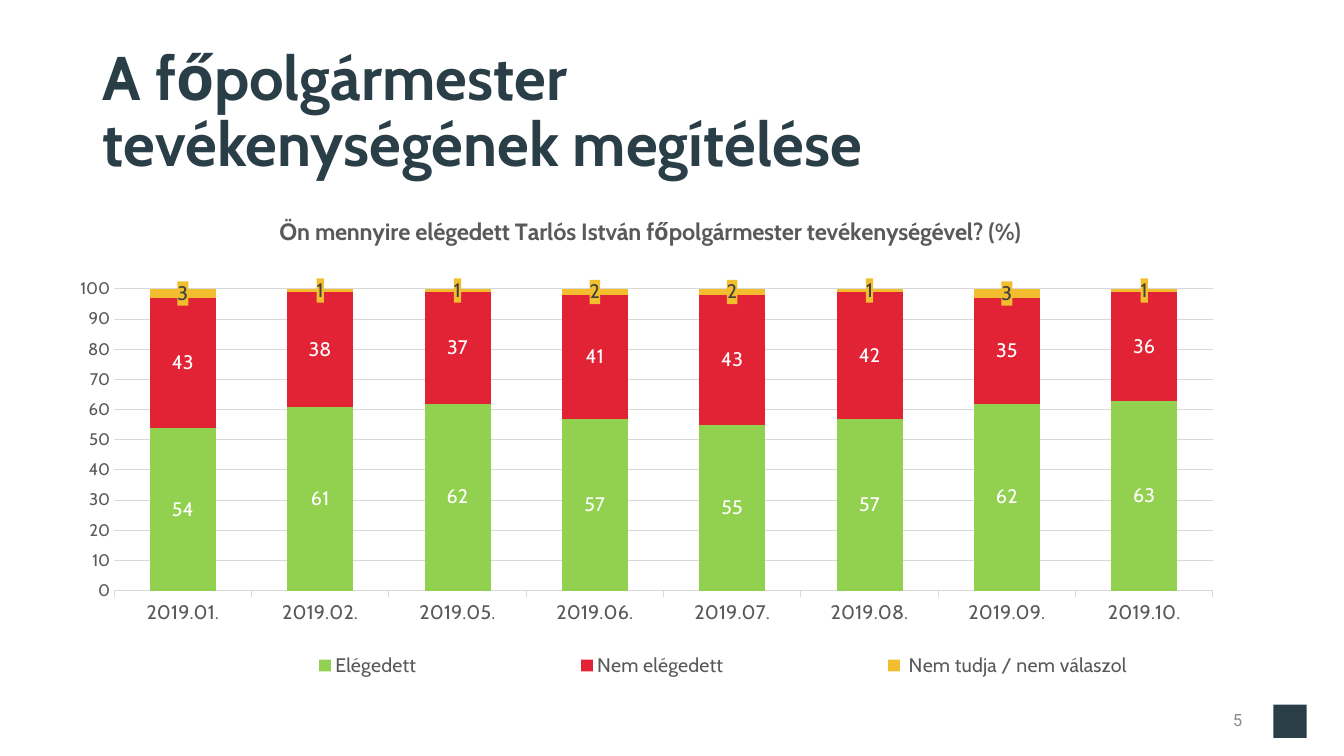
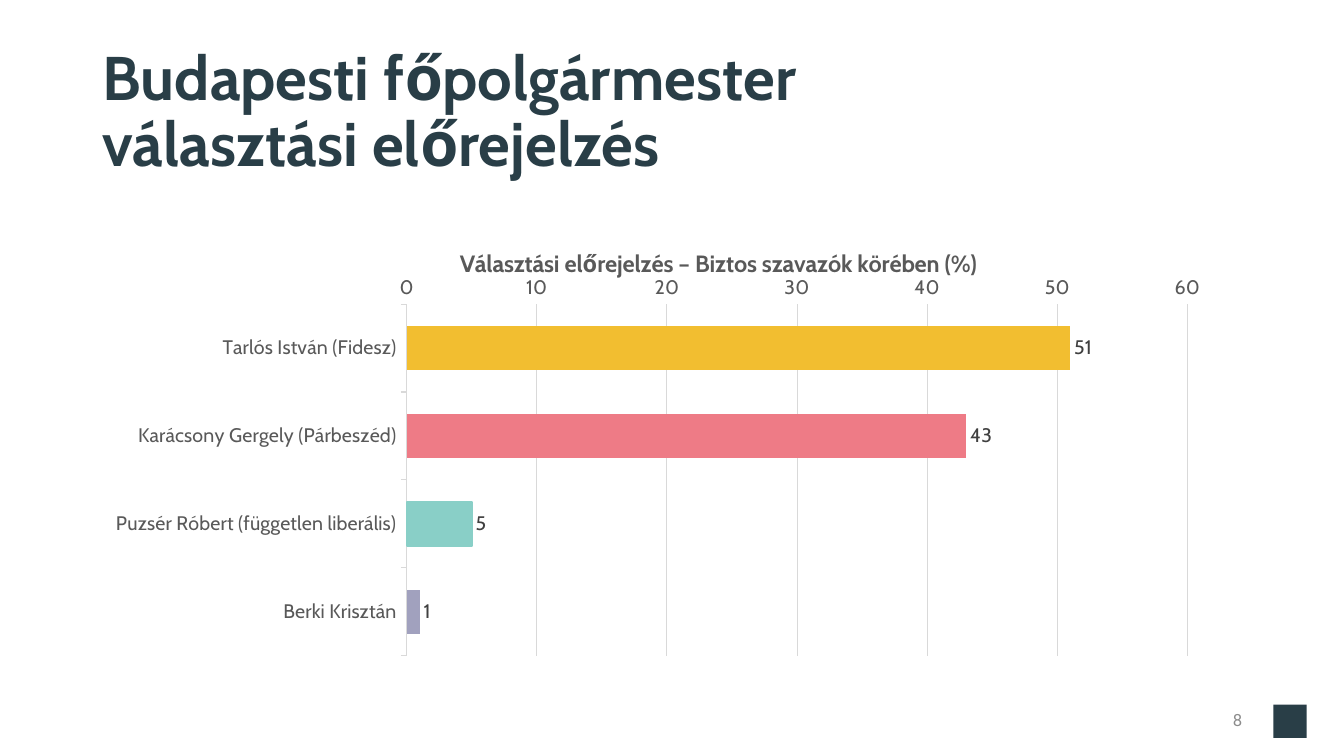
from lxml import etree
from pptx import Presentation
from pptx.chart.data import CategoryChartData
from pptx.dml.color import RGBColor
from pptx.enum import chart as ch, shapes, text
from pptx.oxml import ns
from pptx.util import Inches, Pt

HUE = {"dark": "293E47", "gray": "595959", "pale": "8C8C8C", "grid": "D9D9D9",
       "ink": "404040", "white": "FFFFFF", "green": "92D050", "red": "E22335",
       "gold": "F2BE30", "pink": "EE7B86", "teal": "89CFC7", "lilac": "A1A1BE"}
FONT = "Cabin"


def style(font, size, hue, bold=False, name=FONT):
    font.size, font.bold, font.name = Pt(size), bold, name
    font.color.rgb = RGBColor.from_string(HUE[hue])


def place(node, index, inner=False, **box):
    """Give a chart part a manual layout, as shares of the chart frame."""
    for old in node.findall(ns.qn("c:layout")):
        node.remove(old)
    layout = etree.Element(ns.qn("c:layout"))
    manual = etree.SubElement(layout, ns.qn("c:manualLayout"))
    rows = [("layoutTarget", "inner")] if inner else []
    rows += [("xMode", "edge"), ("yMode", "edge"), *box.items()]
    for tag, val in rows:
        etree.SubElement(manual, ns.qn("c:" + tag)).set("val", str(val))
    node.insert(index, layout)


pages = [
    dict(title="A főpolgármester tevékenységének megítélése", num="5",
         kind=ch.XL_CHART_TYPE.COLUMN_STACKED, at=(0.56, 2, 12.19, 4.95),
         head="Ön mennyire elégedett Tarlós István főpolgármester tevékenységével? (%)",
         spot=dict(x=0.178, y=0.02), plot=dict(x=0.047, y=0.175, w=0.894, h=0.605),
         cats=["2019.01.", "2019.02.", "2019.05.", "2019.06.",
               "2019.07.", "2019.08.", "2019.09.", "2019.10."],
         rows=[("Elégedett", (54, 61, 62, 57, 55, 57, 62, 63), "green", "white"),
               ("Nem elégedett", (43, 38, 37, 41, 43, 42, 35, 36), "red", "white"),
               (" Nem tudja / nem válaszol", (3, 1, 1, 2, 2, 1, 3, 1), "gold", "ink")],
         gap=108, top=100, size=12, pos=ch.XL_LABEL_POSITION.CENTER),
    dict(title="Budapesti főpolgármester választási előrejelzés", num="8",
         kind=ch.XL_CHART_TYPE.BAR_CLUSTERED, at=(0.46, 2.2, 12.41, 4.75),
         head="Választási előrejelzés – Biztos szavazók körében (%)",
         spot=dict(x=0.327, y=0.045), plot=dict(x=0.288, y=0.172, w=0.624, h=0.735),
         cats=["Tarlós István (Fidesz)", "Karácsony Gergely (Párbeszéd)",
               "Puzsér Róbert (független liberális)", "Berki Krisztán"],
         rows=[("Series 1", (51, 43, 5, 1), "teal", "ink")],
         gap=100, top=60, size=14, pos=ch.XL_LABEL_POSITION.OUTSIDE_END),
]

deck = Presentation()
deck.slide_width, deck.slide_height = Inches(13.33), Inches(7.5)

for page in pages:
    slide = deck.slides.add_slide(deck.slide_layouts[6])

    # Corner square
    mark = slide.shapes.add_shape(shapes.MSO_SHAPE.RECTANGLE, Inches(12.63),
                                  Inches(6.99), Inches(0.33), Inches(0.33))
    mark.shadow.inherit = False
    mark.fill.solid()
    mark.fill.fore_color.rgb = RGBColor.from_string(HUE["dark"])
    mark.line.fill.background()

    # Title and page number
    for words, at, size, hue, bold, name, side in (
            (page["title"], (0.92, 0.4, 8.14, 1.45), 44, "dark", True, FONT,
             text.PP_ALIGN.LEFT),
            (page["num"], (9.42, 6.95, 3, 0.4), 12, "pale", False, "Roboto",
             text.PP_ALIGN.RIGHT)):
        frame = slide.shapes.add_textbox(*map(Inches, at)).text_frame
        frame.word_wrap = True
        frame.vertical_anchor = text.MSO_ANCHOR.MIDDLE
        frame.text = words
        para = frame.paragraphs[0]
        para.alignment, para.line_spacing = side, 0.9
        style(para.runs[0].font, size, hue, bold, name)

    # Chart
    data = CategoryChartData(number_format="0")
    data.categories = page["cats"]
    for label, vals, *_ in page["rows"]:
        data.add_series(label, vals)
    chart = slide.shapes.add_chart(page["kind"], *map(Inches, page["at"]), data).chart
    style(chart.font, 14, "gray")
    stack = len(page["rows"]) > 1

    # Chart heading and plot area
    chart.has_title = True
    frame = chart.chart_title.text_frame
    frame.text = page["head"]
    style(frame.paragraphs[0].runs[0].font, 16.8, "gray", True)
    root = chart._chartSpace
    place(root.find(".//" + ns.qn("c:title")), 1, **page["spot"])
    place(root.find(".//" + ns.qn("c:plotArea")), 0, True, **page["plot"])

    # Axes
    cat, val = chart.category_axis, chart.value_axis
    cat.reverse_order = not stack
    cat.crosses = ch.XL_AXIS_CROSSES.MAXIMUM
    cat.major_tick_mark = ch.XL_TICK_MARK.OUTSIDE
    val.major_tick_mark = ch.XL_TICK_MARK.NONE
    val.minimum_scale, val.maximum_scale, val.major_unit = 0, page["top"], 10
    val.has_major_gridlines = True
    for line in (cat.format.line, val.major_gridlines.format.line):
        line.color.rgb = RGBColor.from_string(HUE["grid"])
        line.width = Pt(0.75)
    val.format.line.fill.background()
    val.tick_labels.number_format = "0"
    val.tick_labels.number_format_is_linked = False
    style(cat.tick_labels.font, 14, "gray")
    style(val.tick_labels.font, page["size"], "gray")

    # Series and their labels
    bars = chart.plots[0]
    bars.vary_by_categories = False
    bars.gap_width, bars.overlap = page["gap"], 100 if stack else 0
    for row, (_, _, hue, ink) in zip(bars.series, page["rows"]):
        row.format.fill.solid()
        row.format.fill.fore_color.rgb = RGBColor.from_string(HUE[hue])
        tags = row.data_labels
        tags.show_value, tags.position = True, page["pos"]
        tags.number_format, tags.number_format_is_linked = "0", False
        style(tags.font, 14, ink)
        if hue == "gold":
            back = etree.Element(ns.qn("c:spPr"))
            fill = etree.SubElement(back, ns.qn("a:solidFill"))
            etree.SubElement(fill, ns.qn("a:srgbClr")).set("val", HUE[hue])
            tags._element.find(ns.qn("c:txPr")).addprevious(back)

    chart.has_legend = stack
    if stack:
        chart.legend.position = ch.XL_LEGEND_POSITION.BOTTOM
        chart.legend.include_in_layout = False
        style(chart.legend.font, 14, "gray")
        place(root.find(".//" + ns.qn("c:legend")), 1, x=0.085, y=0.89, w=0.915, h=0.08)
    else:
        # One colour for each candidate
        for i, hue in enumerate(("gold", "pink", "teal", "lilac")):
            look = bars.series[0].points[i].format
            look.fill.solid()
            look.fill.fore_color.rgb = RGBColor.from_string(HUE[hue])
            if hue == "teal":
                look.line.color.rgb = RGBColor.from_string(HUE[hue])
                look.line.width = Pt(1.5)
            else:
                look.line.fill.background()

deck.save("out.pptx")
